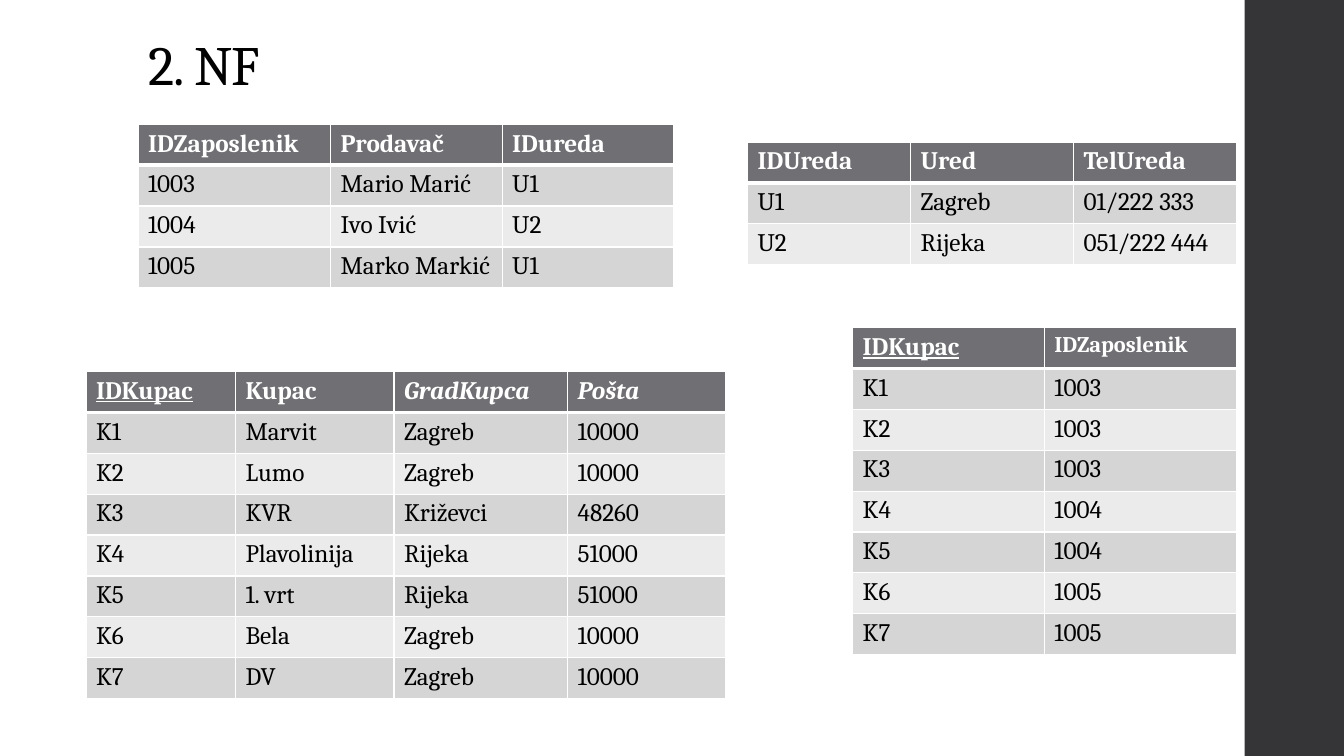
from lxml import etree
from pptx import Presentation
from pptx.dml.color import RGBColor
from pptx.enum import shapes, text
from pptx.oxml import ns
from pptx.util import Pt

WHITE = RGBColor(0xFF, 0xFF, 0xFF)
BLACK = RGBColor(0x00, 0x00, 0x00)
CHARCOAL = RGBColor(0x35, 0x35, 0x37)
HEADER_GREY = RGBColor(0x6F, 0x6F, 0x74)
BANDS = (RGBColor(0xD5, 0xD5, 0xD6), RGBColor(0xEB, 0xEB, 0xEB))

FONT = "Cambria"
SLIDE_WIDTH, SLIDE_HEIGHT = 960, 540
SIDEBAR_WIDTH = 72
ROW_HEIGHT = 29.2

EMPLOYEES = [
    ("IDZaposlenik", "Prodavač", "IDureda"),
    ("1003", "Mario Marić", "U1"),
    ("1004", "Ivo Ivić", "U2"),
    ("1005", "Marko Markić", "U1"),
]
CUSTOMERS = [
    ("IDKupac", "Kupac", "GradKupca", "Pošta"),
    ("K1", "Marvit", "Zagreb", "10000"),
    ("K2", "Lumo", "Zagreb", "10000"),
    ("K3", "KVR", "Križevci", "48260"),
    ("K4", "Plavolinija", "Rijeka", "51000"),
    ("K5", "1. vrt", "Rijeka", "51000"),
    ("K6", "Bela", "Zagreb", "10000"),
    ("K7", "DV", "Zagreb", "10000"),
]
CUSTOMER_SELLERS = [
    ("IDKupac", "IDZaposlenik"),
    ("K1", "1003"),
    ("K2", "1003"),
    ("K3", "1003"),
    ("K4", "1004"),
    ("K5", "1004"),
    ("K6", "1005"),
    ("K7", "1005"),
]
OFFICES = [
    ("IDUreda", "Ured", "TelUreda"),
    ("U1", "Zagreb", "01/222 333"),
    ("U2", "Rijeka", "051/222 444"),
]


def add_sidebar(slide, left, top, width, height):
    sidebar = slide.shapes.add_shape(
        shapes.MSO_SHAPE.RECTANGLE, Pt(left), Pt(top), Pt(width), Pt(height))
    sidebar.shadow.inherit = False
    sidebar.fill.solid()
    sidebar.fill.fore_color.rgb = CHARCOAL
    sidebar.line.fill.background()


def set_title(slide, heading, left, top, width, height):
    title = slide.shapes.title
    title.left, title.top = Pt(left), Pt(top)
    title.width, title.height = Pt(width), Pt(height)
    frame = title.text_frame
    frame.text = heading
    frame.auto_size = text.MSO_AUTO_SIZE.NONE
    frame.vertical_anchor = text.MSO_ANCHOR.BOTTOM
    paragraph = frame.paragraphs[0]
    paragraph.alignment = text.PP_ALIGN.LEFT
    paragraph.line_spacing = 0.9
    font = paragraph.runs[0].font
    font.name, font.size = FONT, Pt(39.6)
    font.color.rgb = BLACK
    font._element.set("spc", "-50")


def set_borders(cell, widths):
    """Draw white borders; widths maps the sides L, R, T, B to points."""
    properties = cell._tc.get_or_add_tcPr()
    for position, (side, width) in enumerate(widths.items()):
        line = etree.Element(ns.qn(f"a:ln{side}"), w=str(Pt(width)))
        fill = etree.SubElement(line, ns.qn("a:solidFill"))
        etree.SubElement(fill, ns.qn("a:srgbClr"), val=str(WHITE))
        properties.insert(position, line)


def format_cell(cell, row):
    is_header = row == 0
    cell.fill.solid()
    cell.fill.fore_color.rgb = HEADER_GREY if is_header else BANDS[(row - 1) % 2]
    set_borders(cell, {"L": 1, "R": 1, "T": 3 if row == 1 else 1,
                       "B": 3 if is_header else 1})
    font = cell.text_frame.paragraphs[0].runs[0].font
    font.name, font.size, font.bold = FONT, Pt(18), is_header
    font.color.rgb = WHITE if is_header else BLACK


def add_relation(slide, records, left, top, column_widths):
    """Add a relation as a banded table and return its header fonts by name."""
    relation = slide.shapes.add_table(
        len(records), len(column_widths), Pt(left), Pt(top),
        Pt(sum(column_widths)), Pt(ROW_HEIGHT * len(records))).table
    for column, width in zip(relation.columns, column_widths):
        column.width = Pt(width)
    for row, record in enumerate(records):
        relation.rows[row].height = Pt(ROW_HEIGHT)
        for column, value in enumerate(record):
            cell = relation.cell(row, column)
            cell.text = value
            format_cell(cell, row)
    return {cell.text: cell.text_frame.paragraphs[0].runs[0].font
            for cell in relation.rows[0].cells}


def build_normal_form_slide(presentation):
    slide = presentation.slides.add_slide(presentation.slide_layouts[5])
    add_sidebar(slide, SLIDE_WIDTH - SIDEBAR_WIDTH + 1, 0,
                SIDEBAR_WIDTH - 1, SLIDE_HEIGHT)
    set_title(slide, "2. NF", 98.6, 30.2, 801.4, 43.2)

    add_relation(slide, EMPLOYEES, 98.6, 88.8, (137.5, 122.6, 122.6))
    customers = add_relation(slide, CUSTOMERS, 61.4, 265.4,
                             (106.8, 113.3, 124, 113))
    sellers = add_relation(slide, CUSTOMER_SELLERS, 609, 234, (137, 137))
    add_relation(slide, OFFICES, 534, 101.5, (116.4,) * 3)

    for headers in (customers, sellers):
        headers["IDKupac"].underline = True
    for dependent in ("GradKupca", "Pošta"):
        customers[dependent].italic = True
    sellers["IDZaposlenik"].size = Pt(16)


def main():
    presentation = Presentation()
    presentation.slide_width = Pt(SLIDE_WIDTH)
    presentation.slide_height = Pt(SLIDE_HEIGHT)
    build_normal_form_slide(presentation)
    presentation.save("out.pptx")


if __name__ == "__main__":
    main()
